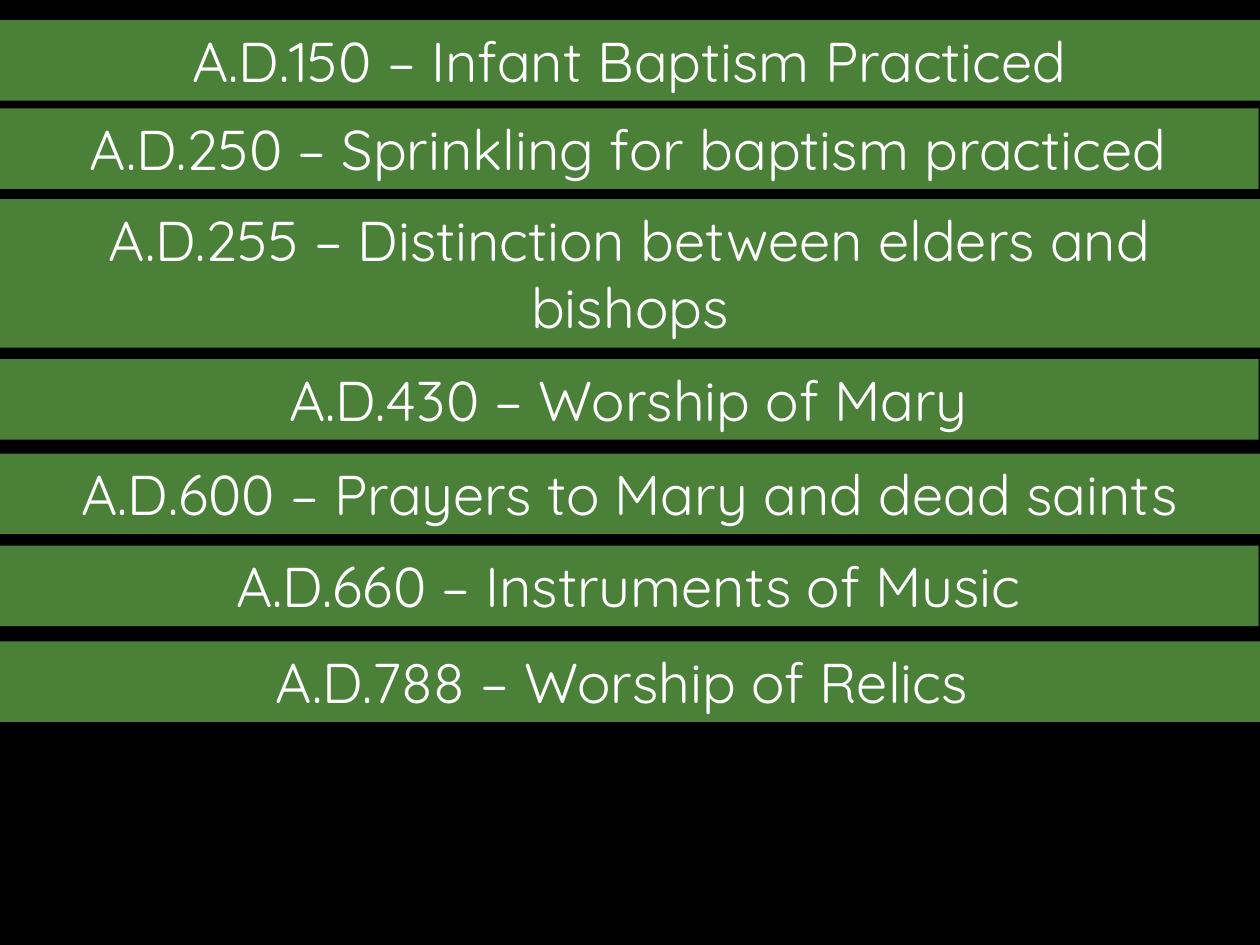
from pptx import Presentation
from pptx.dml.color import RGBColor
from pptx.enum import text
from pptx.util import Inches, Pt

BLACK = RGBColor(0x00, 0x00, 0x00)
GREEN = RGBColor(0x4B, 0x80, 0x39)
WHITE = RGBColor(0xFF, 0xFF, 0xFF)
FONT = "Quicksand"
BAR_WIDTH = 10
ONE_LINE, TWO_LINES = 0.64, 1.18

EVENTS = [
    (0.16, ONE_LINE, "A.D.150 – Infant Baptism Practiced"),
    (0.86, ONE_LINE, "A.D.250 – Sprinkling for baptism practiced"),
    (1.58, TWO_LINES, "A.D.255 – Distinction between elders and bishops"),
    (2.85, ONE_LINE, "A.D.430 – Worship of Mary"),
    (3.6, ONE_LINE, "A.D.600 – Prayers to Mary and dead saints"),
    (4.33, ONE_LINE, "A.D.660 – Instruments of Music"),
    (5.09, ONE_LINE, "A.D.788 – Worship of Relics "),
]


def add_event_bar(page, left, top, width, height, wording):
    """Place one green bar with a centred event on the page."""
    box = page.shapes.add_textbox(
        Inches(left), Inches(top), Inches(width), Inches(height)
    )
    box.fill.solid()
    box.fill.fore_color.rgb = GREEN
    frame = box.text_frame
    frame.word_wrap = True
    frame.auto_size = text.MSO_AUTO_SIZE.SHAPE_TO_FIT_TEXT
    para = frame.paragraphs[0]
    para.text = wording
    para.alignment = text.PP_ALIGN.CENTER
    para.font.name = FONT
    para.font.size = Pt(32)
    para.font.color.rgb = WHITE


def add_timeline(page):
    """Stack the event bars, every second one set slightly to the left."""
    for index, (top, height, wording) in enumerate(EVENTS):
        left = -0.01 if index % 2 else 0
        add_event_bar(page, left, top, BAR_WIDTH, height, wording)


def main():
    """Build the deck and save it."""
    deck = Presentation()
    deck.slide_width, deck.slide_height = Inches(10), Inches(7.5)
    page = deck.slides.add_slide(deck.slide_layouts[6])
    page.background.fill.solid()
    page.background.fill.fore_color.rgb = BLACK
    add_timeline(page)
    deck.save("out.pptx")


if __name__ == "__main__":
    main()
